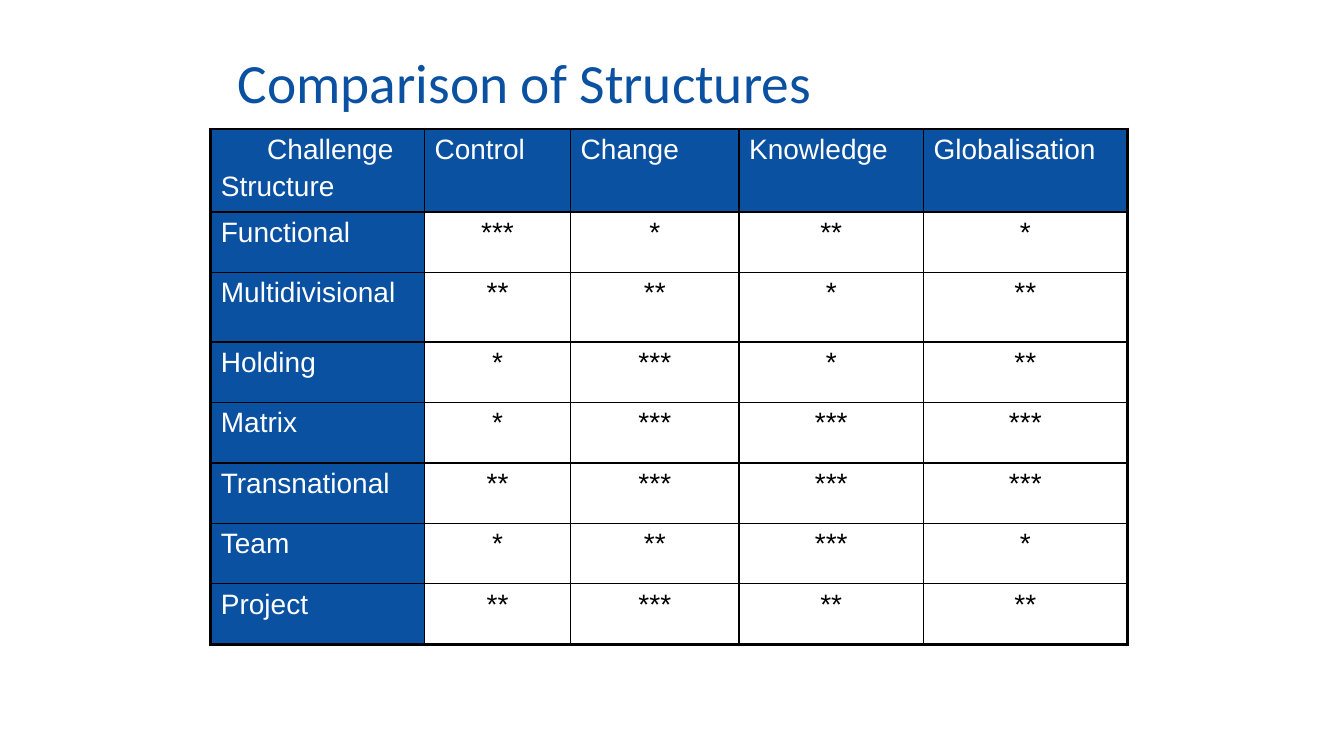
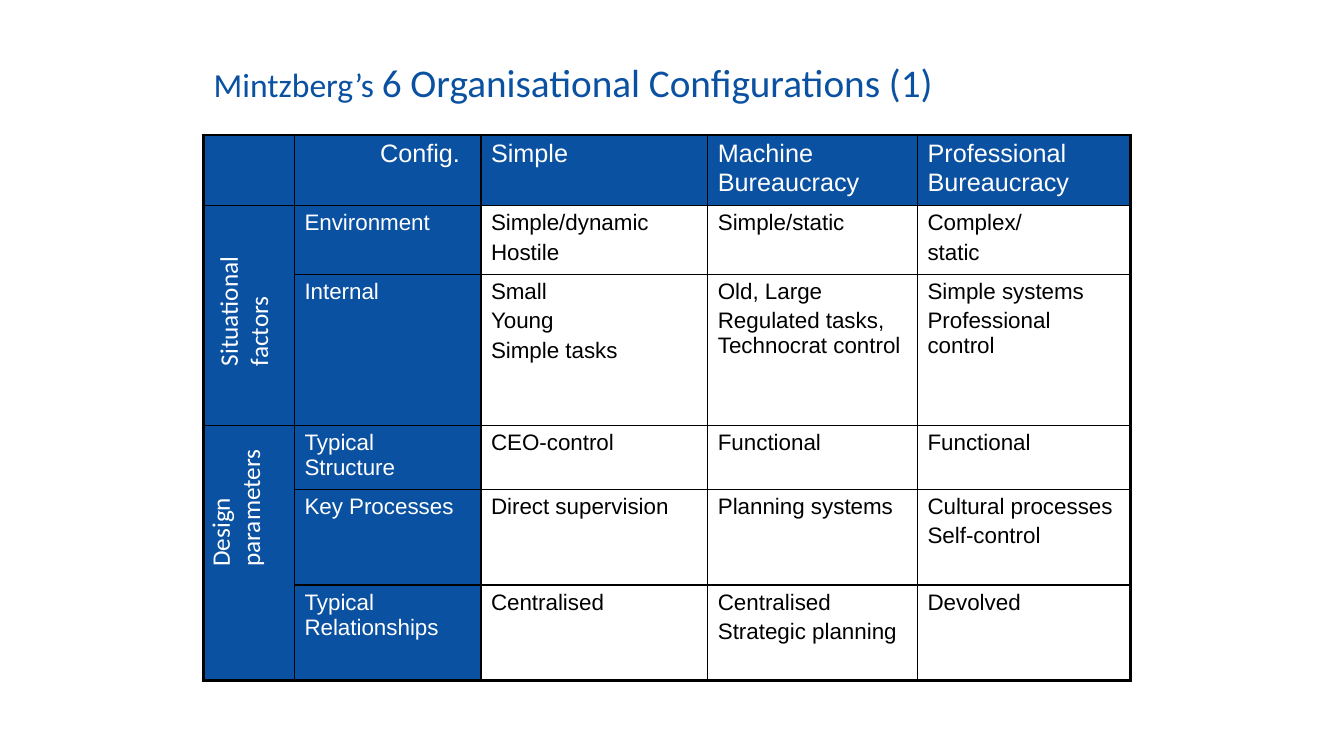
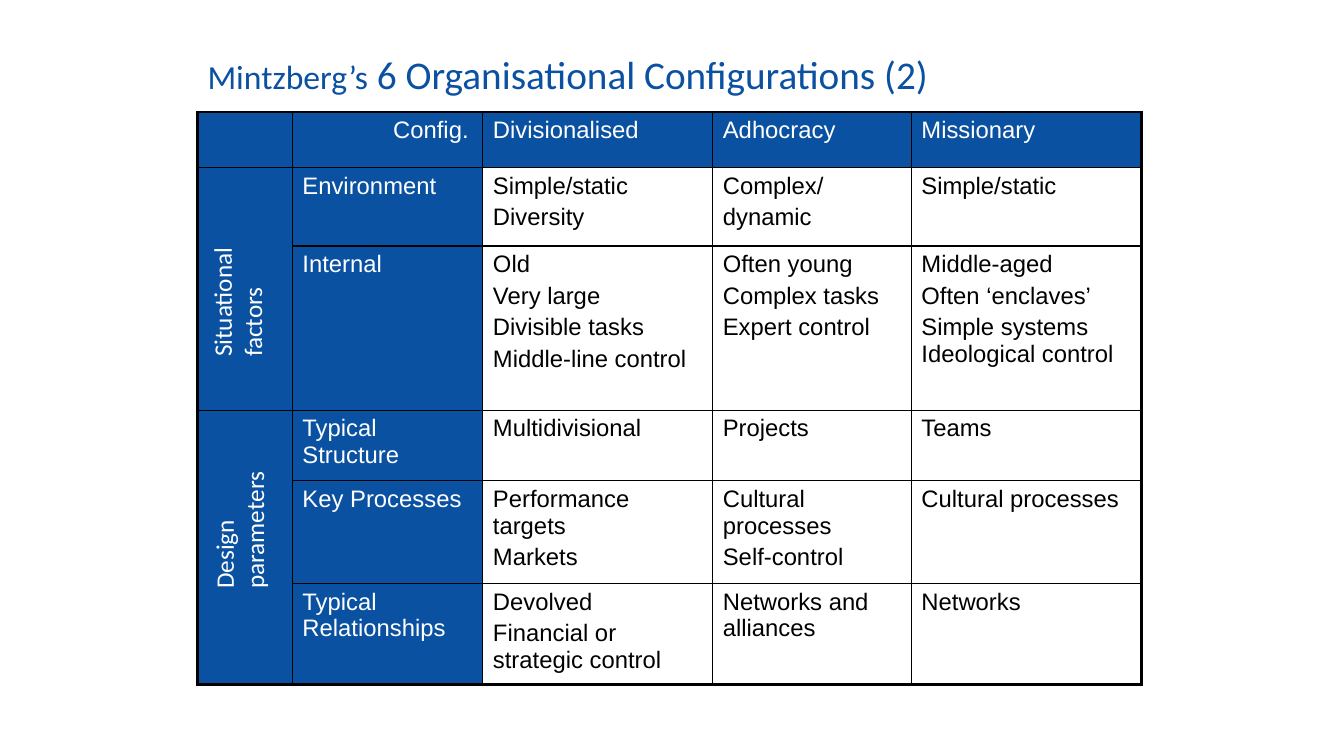
from dataclasses import dataclass

from lxml import etree
from pptx import Presentation
from pptx.dml.color import RGBColor
from pptx.enum.text import MSO_ANCHOR, PP_ALIGN
from pptx.oxml.ns import qn
from pptx.util import Inches, Pt

CENTER = PP_ALIGN.CENTER
LEFT = PP_ALIGN.LEFT
MIDDLE = MSO_ANCHOR.MIDDLE

COLORS = {"blue": "0B51A1", "white": "FFFFFF", "black": "000000"}
TITLE_FONT = "Calibri"
TABLE_FONT = "Arial"
INNER_BORDER = 1
OUTER_BORDER = 2.25


@dataclass(frozen=True)
class Title:
    left: float
    top: float
    width: float
    runs: list[tuple[str, float]]


@dataclass(frozen=True)
class Grid:
    left: float
    top: float
    columns: list[float]
    heights: list[float]
    rows: list[list[str]]
    header_size: float
    body_size: float
    label_columns: int
    corner_indent: float
    body_align: PP_ALIGN = LEFT
    row_groups: tuple[tuple[int, int], ...] = ()


@dataclass(frozen=True)
class SideLabel:
    left: float
    bottom: float
    text: str


@dataclass(frozen=True)
class Page:
    title: Title
    grid: Grid
    side_labels: tuple[SideLabel, ...] = ()


PAGES = [
    Page(
        Title(2.26, 0.49, 9, [("Comparison of Structures", 39.6)]),
        Grid(
            2.09, 1.28,
            [2.12, 1.45, 1.67, 1.83, 2.02],
            [0.77, 0.6, 0.69] + [0.6] * 5,
            [
                ["Challenge\nStructure", "Control", "Change", "Knowledge", "Globalisation"],
                ["Functional", "***", "*", "**", "*"],
                ["Multidivisional", "**", "**", "*", "**"],
                ["Holding", "*", "***", "*", "**"],
                ["Matrix", "*", "***", "***", "***"],
                ["Transnational", "**", "***", "***", "***"],
                ["Team", "*", "**", "***", "*"],
                ["Project", "**", "***", "**", "**"],
            ],
            header_size=20, body_size=20, label_columns=1,
            corner_indent=0.46, body_align=CENTER,
        ),
    ),
    Page(
        Title(2.02, 0.49, 9.45,
              [("Mintzberg’s ", 24), ("6 Organisational Configurations (1)", 28)]),
        Grid(
            2.02, 1.34,
            [0.9, 1.85, 2.25, 2.08, 2.11],
            [0.58, 0.68, 1.5, 0.63, 0.95, 0.95],
            [
                ["", "Config.", "Simple", "Machine Bureaucracy", "Professional Bureaucracy"],
                ["", "Environment", "Simple/dynamic\nHostile", "Simple/static",
                 "Complex/\nstatic"],
                ["", "Internal", "Small\nYoung\nSimple tasks",
                 "Old, Large\nRegulated tasks, Technocrat control",
                 "Simple systems\nProfessional control"],
                ["", "Typical Structure", "CEO-control", "Functional", "Functional"],
                ["", "Key Processes", "Direct supervision", "Planning systems",
                 "Cultural processes\nSelf-control"],
                ["", "Typical Relationships", "Centralised",
                 "Centralised\nStrategic planning", "Devolved"],
            ],
            header_size=18, body_size=16, label_columns=2,
            corner_indent=0.75, row_groups=((1, 2), (3, 5)),
        ),
        (SideLabel(2.06, 3.73, "Situational\nfactors"),
         SideLabel(1.98, 5.72, "Design\nparameters")),
    ),
    Page(
        Title(1.96, 0.41, 9.29,
              [("Mintzberg’s", 24), (" 6 Organisational Configurations (2)", 28)]),
        Grid(
            1.96, 1.11,
            [0.94, 1.89, 2.28, 1.97, 2.28],
            [0.55, 0.78, 1.63, 0.7, 1.02, 0.96],
            [
                ["", "Config.", "Divisionalised", "Adhocracy", "Missionary"],
                ["", "Environment", "Simple/static\nDiversity", "Complex/\ndynamic",
                 "Simple/static"],
                ["", "Internal", "Old\nVery large\nDivisible tasks\nMiddle-line control",
                 "Often young\nComplex tasks\nExpert control",
                 "Middle-aged\nOften ‘enclaves’\nSimple systems Ideological control"],
                ["", "Typical Structure", "Multidivisional", "Projects", "Teams"],
                ["", "Key Processes", "Performance targets\nMarkets",
                 "Cultural processes\nSelf-control", "Cultural processes"],
                ["", "Typical Relationships", "Devolved\nFinancial or strategic control",
                 "Networks and alliances", "Networks"],
            ],
            header_size=17, body_size=17, label_columns=2,
            corner_indent=0.9, row_groups=((1, 2), (3, 5)),
        ),
        (SideLabel(2, 3.64, "Situational\nfactors"),
         SideLabel(2.02, 5.94, "Design\nparameters")),
    ),
]


def add_run(paragraph, text: str, *, size: float, color: str, font: str) -> None:
    run = paragraph.add_run()
    run.text = text
    run.font.size = Pt(size)
    run.font.name = font
    run.font.color.rgb = RGBColor.from_string(COLORS[color])


def write_text(frame, text: str, *, size: float, color: str, font: str,
               align: PP_ALIGN = LEFT, space_before: float = 0,
               first_indent: float = 0) -> None:
    """Write one paragraph per line; first_indent moves only the first one."""
    for index, line in enumerate(text.split("\n")):
        paragraph = frame.add_paragraph() if index else frame.paragraphs[0]
        paragraph.alignment = align
        paragraph.space_before = Pt(space_before)
        if first_indent and not index:
            paragraph._p.get_or_add_pPr().set("marL", str(Inches(first_indent)))
        add_run(paragraph, line, size=size, color=color, font=font)


def add_text_frame(slide, left: float, top: float, width: float, height: float):
    box = slide.shapes.add_textbox(Inches(left), Inches(top), Inches(width), Inches(height))
    box.text_frame.word_wrap = True
    return box.text_frame


def add_title(slide, title: Title) -> None:
    frame = add_text_frame(slide, title.left, title.top, title.width, 0.71)
    frame.vertical_anchor = MIDDLE
    paragraph = frame.paragraphs[0]
    paragraph.line_spacing = 0.9
    for text, size in title.runs:
        add_run(paragraph, text, size=size, color="blue", font=TITLE_FONT)


def add_side_label(slide, label: SideLabel) -> None:
    """Add text that reads upwards from the given bottom edge."""
    height = 1.5
    frame = add_text_frame(slide, label.left, label.bottom - height, 0.81, height)
    frame._txBody.bodyPr.set("vert", "vert270")
    write_text(frame, label.text, size=18, color="white", font=TITLE_FONT)


def set_borders(cell, widths: dict[str, float]) -> None:
    """Set borders, keyed L, R, T, B in that order, ahead of the cell's fill."""
    properties = cell._tc.get_or_add_tcPr()
    for index, (side, width) in enumerate(widths.items()):
        line = etree.Element(qn(f"a:ln{side}"), w=str(Pt(width)))
        fill = etree.SubElement(line, qn("a:solidFill"))
        etree.SubElement(fill, qn("a:srgbClr"), val=COLORS["black"])
        properties.insert(index, line)


def border_widths(cell, row: int, column: int, grid: Grid) -> dict[str, float]:
    def width(is_outer: bool) -> float:
        return OUTER_BORDER if is_outer else INNER_BORDER

    span = cell.span_height if cell.is_merge_origin else 1
    at_bottom = row + span == len(grid.rows)
    widths = {"L": width(column == 0), "R": width(column == len(grid.columns) - 1)}
    if not cell.is_spanned:
        widths["T"] = width(row == 0)
    if not cell.is_spanned or at_bottom:
        widths["B"] = width(at_bottom)
    return widths


def add_grid(slide, grid: Grid) -> None:
    table = slide.shapes.add_table(
        len(grid.rows), len(grid.columns), Inches(grid.left), Inches(grid.top),
        Inches(sum(grid.columns)), Inches(sum(grid.heights))).table
    table.first_row = False
    table.horz_banding = False
    for column, width in zip(table.columns, grid.columns):
        column.width = Inches(width)
    for row, height in zip(table.rows, grid.heights):
        row.height = Inches(height)
    for first, last in grid.row_groups:
        table.cell(first, 0).merge(table.cell(last, 0))

    for row, texts in enumerate(grid.rows):
        for column, text in enumerate(texts):
            cell = table.cell(row, column)
            is_header = row == 0
            is_label = is_header or column < grid.label_columns
            if is_label:
                cell.fill.solid()
                cell.fill.fore_color.rgb = RGBColor.from_string(COLORS["blue"])
            else:
                cell.fill.background()
            set_borders(cell, border_widths(cell, row, column, grid))
            if text:
                size = grid.header_size if is_header else grid.body_size
                is_corner = is_header and column == grid.label_columns - 1
                write_text(
                    cell.text_frame, text, size=size, font=TABLE_FONT,
                    color="white" if is_label else "black",
                    align=LEFT if is_label else grid.body_align,
                    space_before=0.2 * size,
                    first_indent=grid.corner_indent if is_corner else 0)


def main() -> None:
    presentation = Presentation()
    presentation.slide_width = Inches(13.33)
    presentation.slide_height = Inches(7.5)
    blank_layout = presentation.slide_layouts[6]
    for page in PAGES:
        slide = presentation.slides.add_slide(blank_layout)
        add_title(slide, page.title)
        add_grid(slide, page.grid)
        for label in page.side_labels:
            add_side_label(slide, label)
    presentation.save("out.pptx")


if __name__ == "__main__":
    main()
